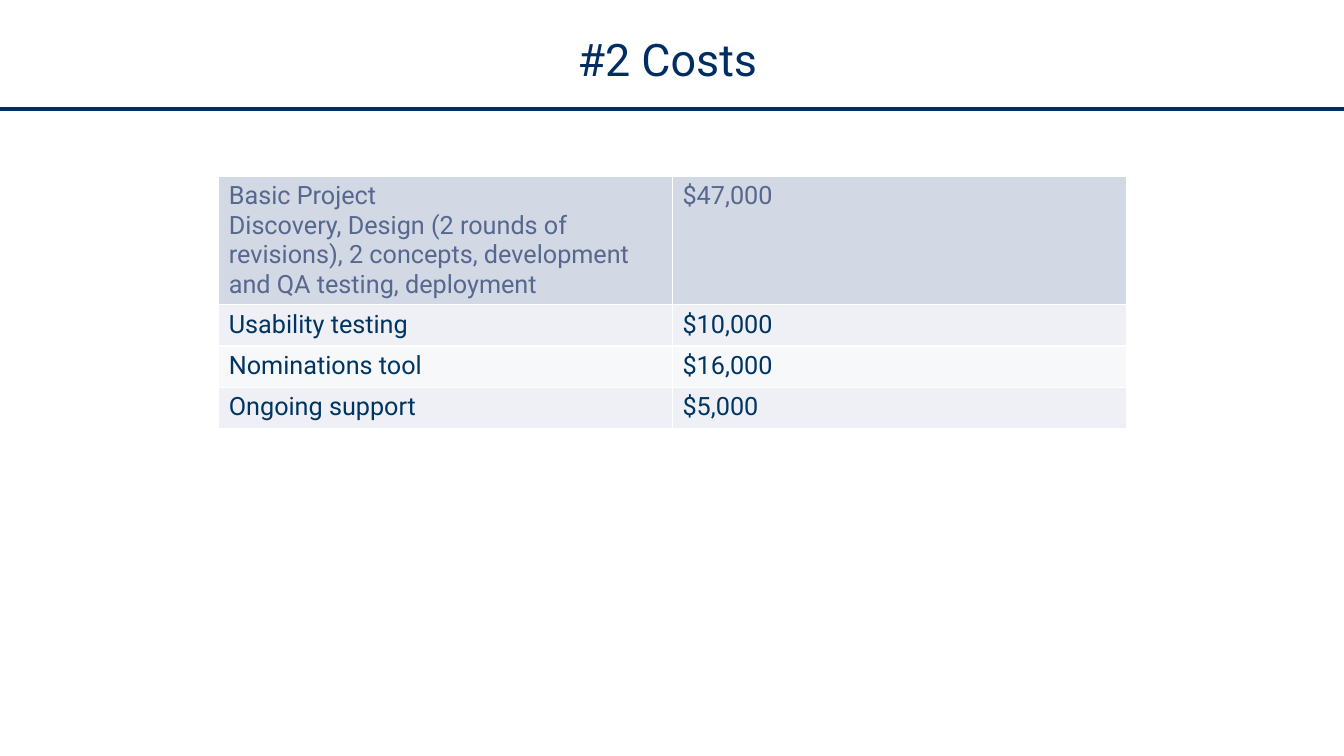
import pptx
import pptx.dml.color
import pptx.enum.shapes
import pptx.enum.text
import pptx.oxml
import pptx.oxml.ns
import pptx.util
from pptx.util import Inches

COLORS = {
    "navy": "002D62",
    "header_text": "57688F",
    "body_text": "003562",
    "header_fill": "D2D8E4",
    "odd_fill": "EEF0F5",
    "even_fill": "F7F8FA",
    "border": "FFFFFF",
}
FONT = "Roboto"
COSTS = [
    ("Basic Project\nDiscovery, Design (2 rounds of revisions), 2 concepts, "
     "development and QA testing, deployment", "$47,000"),
    ("Usability testing", "$10,000"),
    ("Nominations tool", "$16,000"),
    ("Ongoing support", "$5,000"),
]


def rgb(color):
    return pptx.dml.color.RGBColor.from_string(COLORS[color])


def format_text(frame, size, color):
    font_values = {"name": FONT, "size": pptx.util.Pt(size), "bold": False}
    for paragraph in frame.paragraphs:
        for attribute, value in font_values.items():
            setattr(paragraph.font, attribute, value)
        paragraph.font.color.rgb = rgb(color)


def add_title(slide, text):
    title = slide.shapes.title
    place = {"left": 0.89, "top": 0.08, "width": 11.46, "height": 1}
    for attribute, value in place.items():
        setattr(title, attribute, Inches(value))
    title.text_frame.text = text
    title.text_frame.vertical_anchor = pptx.enum.text.MSO_ANCHOR.MIDDLE
    title.text_frame.paragraphs[0].alignment = pptx.enum.text.PP_ALIGN.CENTER
    format_text(title.text_frame, 32, "navy")


def add_rule(slide, y, width):
    rule = slide.shapes.add_connector(
        pptx.enum.shapes.MSO_CONNECTOR.STRAIGHT, 0, y, width, y)
    rule.line.color.rgb = rgb("navy")
    rule.line.width = pptx.util.Pt(3)
    rule._element.spPr.append(pptx.oxml.parse_xml(
        f"<a:effectLst {pptx.oxml.ns.nsdecls('a')}/>"))


def add_borders(cell):
    properties = cell._tc.get_or_add_tcPr()
    for side in "LRTB":
        properties.append(pptx.oxml.parse_xml(
            f'<a:ln{side} {pptx.oxml.ns.nsdecls("a")} w="{pptx.util.Pt(1)}">'
            f'<a:solidFill><a:srgbClr val="{COLORS["border"]}"/></a:solidFill>'
            f'</a:ln{side}>'))


def fill_cell(cell, text, fill, text_color):
    cell.text = text
    format_text(cell.text_frame, 18, text_color)
    add_borders(cell)
    cell.fill.solid()
    cell.fill.fore_color.rgb = rgb(fill)


def add_cost_table(slide):
    table = slide.shapes.add_table(
        len(COSTS), 2, Inches(2.17), Inches(1.75), Inches(9), Inches(2.49)).table
    for index, entries in enumerate(COSTS):
        is_header = index == 0
        table.rows[index].height = Inches(1.26 if is_header else 0.41)
        band = "odd_fill" if index % 2 else "even_fill"
        fill = "header_fill" if is_header else band
        text_color = "header_text" if is_header else "body_text"
        for cell, text in zip(table.rows[index].cells, entries):
            fill_cell(cell, text, fill, text_color)


def main():
    deck = pptx.Presentation()
    deck.slide_width, deck.slide_height = Inches(13.33), Inches(7.5)
    slide = deck.slides.add_slide(deck.slide_layouts.get_by_name("Title Only"))
    add_rule(slide, Inches(1.08), deck.slide_width)
    add_title(slide, "#2 Costs")
    add_cost_table(slide)
    deck.save("out.pptx")


if __name__ == "__main__":
    main()
